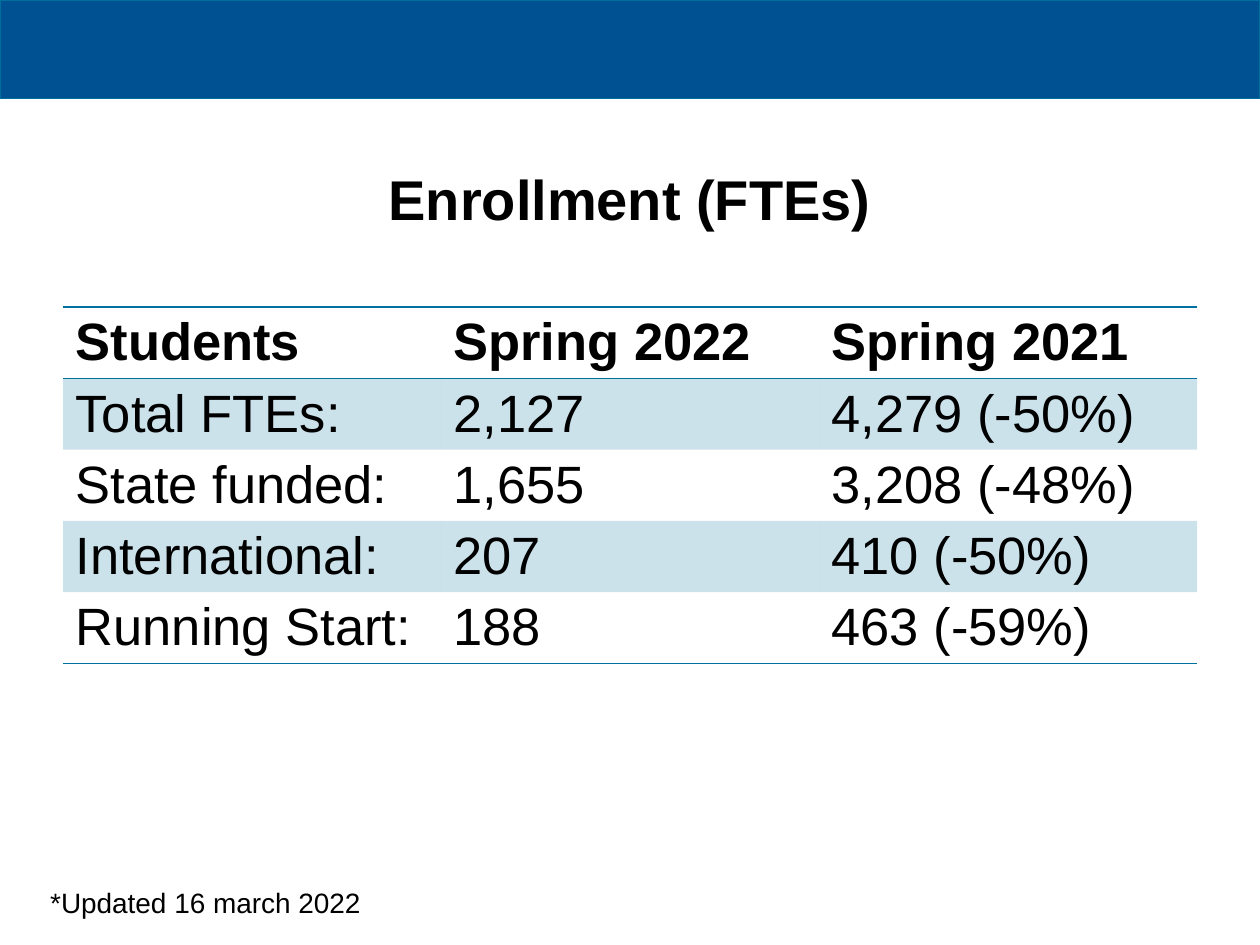
from dataclasses import dataclass

from lxml.etree import SubElement
from pptx import Presentation
from pptx.dml.color import RGBColor
from pptx.enum.shapes import MSO_SHAPE
from pptx.enum.text import MSO_ANCHOR, PP_ALIGN
from pptx.oxml import parse_xml
from pptx.oxml.ns import nsdecls, qn
from pptx.util import Inches, Pt

WIDE, HIGH = Inches(10), Inches(7.5)
FONT = "Arial"
HUES = {"bar": "005192", "edge": "006F9B", "rule": "00719F", "ink": "000000"}
PLAIN = "{2D5ABB26-0587-4C30-8999-92F81FD0307C}"
ROWS = [
    ("Students", "Spring 2022", "Spring 2021"),
    ("Total FTEs:", "2,127", "4,279 (-50%)"),
    ("State funded:", "1,655", "3,208 (-48%)"),
    ("International:", "207", "410 (-50%)"),
    ("Running Start: ", "188", "463 (-59%)"),
]


@dataclass
class Area:
    left: float
    top: float
    wide: float
    high: float

    def place(self) -> tuple[int, int, int, int]:
        return (int(self.left * WIDE), int(self.top * HIGH),
                int(self.wide * WIDE), int(self.high * HIGH))


@dataclass
class Label:
    text: str
    area: Area
    size: int
    bold: bool
    align: PP_ALIGN
    anchor: MSO_ANCHOR


LABELS = [
    Label("Enrollment (FTEs)", Area(0.05, 0.13, 0.9, 0.16), 32, True,
          PP_ALIGN.CENTER, MSO_ANCHOR.MIDDLE),
    Label("*Updated 16 march 2022", Area(0.03, 0.93, 0.53, 0.05), 16, False,
          PP_ALIGN.LEFT, MSO_ANCHOR.TOP),
]


def hue(name: str) -> RGBColor:
    return RGBColor.from_string(HUES[name])


def style(para, size: int, bold: bool) -> None:
    para.font.name = FONT
    para.font.size = Pt(size)
    para.font.bold = bold
    para.font.color.rgb = hue("ink")


def draw_bar(slide, area: Area) -> None:
    bar = slide.shapes.add_shape(MSO_SHAPE.RECTANGLE, *area.place())
    bar.shadow.inherit = False
    bar.fill.solid()
    bar.fill.fore_color.rgb = hue("bar")
    bar.line.color.rgb = hue("edge")
    bar.line.width = Pt(0.75)


def draw_label(slide, label: Label) -> None:
    frame = slide.shapes.add_textbox(*label.area.place()).text_frame
    frame.word_wrap = True
    frame.vertical_anchor = label.anchor
    para = frame.paragraphs[0]
    para.text = label.text
    para.alignment = label.align
    style(para, label.size, label.bold)


def rule(cell, sides: list[str]) -> None:
    props = cell._tc.get_or_add_tcPr()
    for spot, side in enumerate(sides):
        props.insert(spot, parse_xml(
            f'<a:{side} {nsdecls("a")} w="{Pt(1)}"><a:solidFill>'
            f'<a:srgbClr val="{HUES["rule"]}"/></a:solidFill></a:{side}>'))


def shade(cell) -> None:
    cell.fill.solid()
    cell.fill.fore_color.rgb = hue("rule")
    tint = cell._tc.tcPr.find(f".//{qn('a:srgbClr')}")
    SubElement(tint, qn("a:alpha"), val="20000")


def draw_table(slide, rows: list[tuple], area: Area) -> None:
    table = slide.shapes.add_table(len(rows), len(rows[0]), *area.place()).table
    table._tbl.tblPr.find(qn("a:tableStyleId")).text = PLAIN
    table.horz_banding = False
    last = len(rows) - 1
    for r, row in enumerate(rows):
        for c, text in enumerate(row):
            cell = table.cell(r, c)
            cell.text = text
            style(cell.text_frame.paragraphs[0], 30, r == 0)
            if r % 2:
                shade(cell)
            else:
                cell.fill.background()
            if r == 0:
                rule(cell, ["lnT", "lnB"])
            elif r == last:
                rule(cell, ["lnB"])


def main() -> None:
    deck = Presentation()
    deck.slide_width, deck.slide_height = WIDE, HIGH
    slide = deck.slides.add_slide(deck.slide_layouts[6])
    draw_bar(slide, Area(0, 0, 1, 0.104))
    draw_table(slide, ROWS, Area(0.05, 0.325, 0.9, 0.27))
    for label in LABELS:
        draw_label(slide, label)
    deck.save("out.pptx")


if __name__ == "__main__":
    main()
